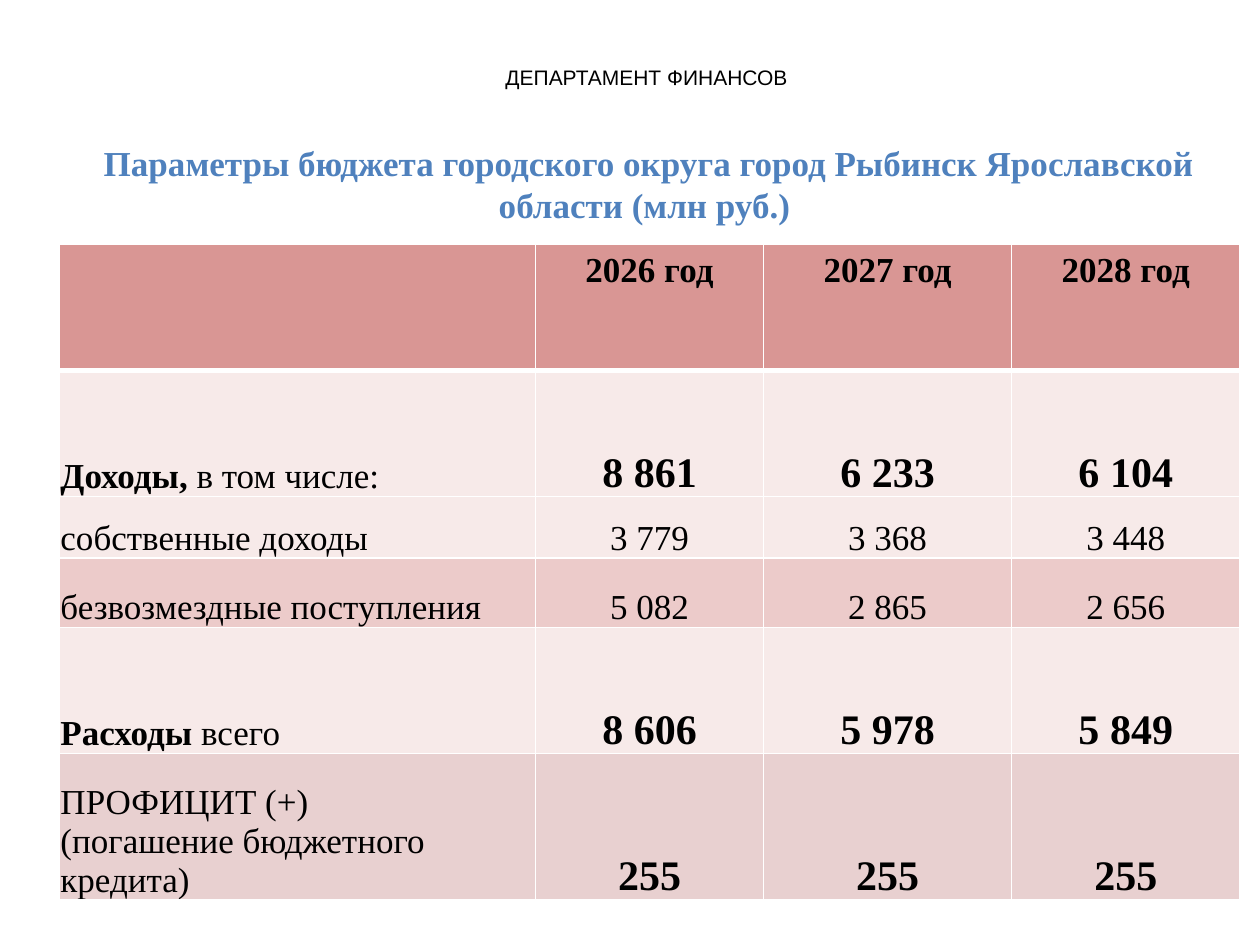
from dataclasses import dataclass

from lxml.etree import SubElement
from pptx import Presentation
from pptx.dml.color import RGBColor
from pptx.enum.text import MSO_ANCHOR as Anchor, MSO_AUTO_SIZE as AutoSize, PP_ALIGN as Align
from pptx.oxml.ns import qn
from pptx.util import Pt

COLORS = {
    "text": "000000",
    "title": "4F81BD",
    "border": "FFFFFF",
    "header": "D99694",
    "light": "F7EAE9",
    "medium": "ECCBCA",
    "total": "E8D0D0",
}
SERIF = "Times New Roman"
COLUMN_WIDTHS = (272.16, 130.32, 141.84, 130.32)
YEARS = ("2026 год", "2027 год", "2028 год")


@dataclass
class Heading:
    text: str
    left: float
    top: float
    width: float
    height: float
    font: str
    size: float
    color: str
    bold: bool = False


@dataclass
class BudgetRow:
    """A table row; the label is its bold start, then plain paragraphs."""
    height: float
    fill: str
    bold_label: str
    labels: tuple[str, ...]
    values: tuple[str, ...]
    is_key: bool = False


HEADINGS = (
    Heading("ДЕПАРТАМЕНТ ФИНАНСОВ ", 257.76, 33.12, 226.8, 21.6, "Arial", 12, "text"),
    Heading("Параметры бюджета городского округа город Рыбинск Ярославской области (млн руб.) ",
            50.4, 77.04, 640.8, 55.44, SERIF, 20, "title", True),
)
HEADER_HEIGHT = 72
ROWS = (
    BudgetRow(72, "light", "Доходы,", (" в том числе:",), ("8 861", "6 233", "6 104"), True),
    BudgetRow(35.28, "light", "", ("собственные доходы",), ("3 779", "3 368", "3 448")),
    BudgetRow(39.6, "medium", "", ("безвозмездные поступления",), ("5 082", "2 865", "2 656")),
    BudgetRow(72, "light", "Расходы ", ("всего",), ("8 606", "5 978", "5 849"), True),
    BudgetRow(83.52, "total", "", ("ПРОФИЦИТ (+)", "(погашение бюджетного кредита)"),
              ("255", "255", "255"), True),
)


def set_font(font, name: str, size: float, color: str, bold: bool | None = False) -> None:
    font.name, font.size, font.bold = name, Pt(size), bold
    font.color.rgb = RGBColor.from_string(COLORS[color])


def add_heading(slide, heading: Heading) -> None:
    box = slide.shapes.add_textbox(Pt(heading.left), Pt(heading.top),
                                   Pt(heading.width), Pt(heading.height))
    frame = box.text_frame
    frame.word_wrap = True
    frame.auto_size = AutoSize.SHAPE_TO_FIT_TEXT
    para = frame.paragraphs[0]
    para.text = heading.text
    para.alignment = Align.CENTER
    set_font(para.font, heading.font, heading.size, heading.color, heading.bold)


def style_cell(cell, fill: str, top: float = 1, bottom: float = 1) -> None:
    """Set borders (widths in points) before the fill, as the schema orders them."""
    properties = cell._tc.get_or_add_tcPr()
    for side, width in (("L", 1), ("R", 1), ("T", top), ("B", bottom)):
        line = SubElement(properties, qn(f"a:ln{side}"), w=str(Pt(width)))
        solid = SubElement(line, qn("a:solidFill"))
        SubElement(solid, qn("a:srgbClr"), val=COLORS["border"])
    cell.fill.solid()
    cell.fill.fore_color.rgb = RGBColor.from_string(COLORS[fill])


def write_centered(cell, text: str, size: float, bold: bool) -> None:
    para = cell.text_frame.paragraphs[0]
    para.text = text
    para.alignment = Align.CENTER
    set_font(para.font, SERIF, size, "text", bold)


def write_label(cell, row: BudgetRow) -> None:
    frame = cell.text_frame
    for index, label in enumerate(row.labels):
        para = frame.add_paragraph() if index else frame.paragraphs[0]
        para.alignment = Align.LEFT
        set_font(para.font, SERIF, 20, "text", None)
        if row.bold_label and index == 0:
            span = para.add_run()
            span.text = row.bold_label
            span.font.bold = True
        span = para.add_run()
        span.text = label
        span.font.bold = False


def add_budget_table(slide) -> None:
    heights = (HEADER_HEIGHT, *(row.height for row in ROWS))
    table = slide.shapes.add_table(len(heights), len(COLUMN_WIDTHS), Pt(33.84), Pt(139.68),
                                   Pt(sum(COLUMN_WIDTHS)), Pt(sum(heights))).table
    table.horz_banding = False
    for column, width in zip(table.columns, COLUMN_WIDTHS):
        column.width = Pt(width)
    for table_row, height in zip(table.rows, heights):
        table_row.height = Pt(height)

    for index, year in enumerate(("", *YEARS)):
        cell = table.cell(0, index)
        style_cell(cell, "header", bottom=3)
        write_centered(cell, year, 20, True)

    for row_index, row in enumerate(ROWS, start=1):
        for column_index, value in enumerate(("", *row.values)):
            cell = table.cell(row_index, column_index)
            style_cell(cell, row.fill, top=3 if row_index == 1 else 1)
            cell.vertical_anchor = Anchor.BOTTOM
            cell.margin_left = cell.margin_top = cell.margin_right = Pt(0.72)
            cell.margin_bottom = Pt(0)
            if column_index:
                write_centered(cell, value, 24 if row.is_key else 20, row.is_key)
            else:
                write_label(cell, row)


def main() -> None:
    deck = Presentation()
    deck.slide_width, deck.slide_height = Pt(720), Pt(540)
    slide = deck.slides.add_slide(deck.slide_layouts[6])
    for heading in HEADINGS:
        add_heading(slide, heading)
    add_budget_table(slide)
    deck.save("out.pptx")


if __name__ == "__main__":
    main()
